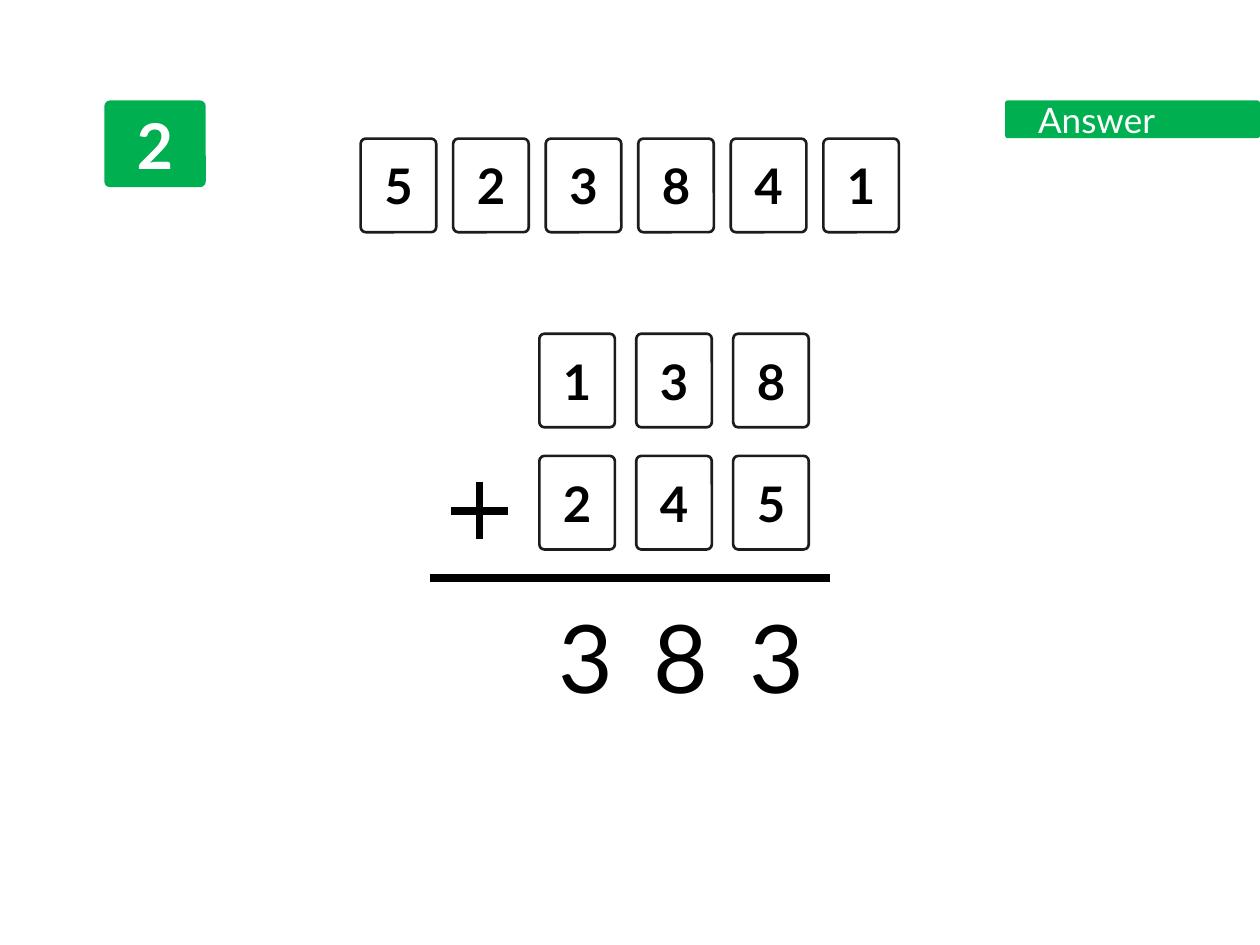
from dataclasses import dataclass

from lxml.etree import SubElement
from pptx import Presentation
from pptx.dml.color import RGBColor
from pptx.enum.shapes import MSO_CONNECTOR, MSO_SHAPE
from pptx.enum.text import MSO_ANCHOR, MSO_AUTO_SIZE, PP_ALIGN
from pptx.oxml.ns import qn
from pptx.util import Pt


@dataclass(frozen=True)
class Theme:
    font: str = "Lato"
    green: RGBColor = RGBColor(0x00, 0xB0, 0x50)
    white: RGBColor = RGBColor(0xFF, 0xFF, 0xFF)
    black: RGBColor = RGBColor(0x00, 0x00, 0x00)
    edge: RGBColor = RGBColor(0x1C, 0x1C, 0x1C)
    badge_size: float = 36
    label_size: float = 20
    card_size: float = 28
    total_size: float = 54
    edge_width: float = 1.5
    rule_width: float = 4.5
    corner: float = 0.067


THEME = Theme()
CARD_W, CARD_H = 43.2, 53.5


def write(sp, text, size, color, bold=False, **frame):
    """Put one centred run in a shape; frame holds text frame settings."""
    tf = sp.text_frame
    for name, value in {"word_wrap": True, **frame}.items():
        setattr(tf, name, value)
    p = tf.paragraphs[0]
    p.alignment = PP_ALIGN.CENTER
    r = p.add_run()
    r.text = text
    for name, value in {"name": THEME.font, "size": Pt(size), "bold": bold}.items():
        setattr(r.font, name, value)
    r.font.color.rgb = color
    return r


def add_box(shapes, box, fill, edge=None):
    sp = shapes.add_shape(MSO_SHAPE.ROUNDED_RECTANGLE, *map(Pt, box))
    sp.adjustments[0] = THEME.corner
    sp.shadow.inherit = False
    sp.fill.solid()
    sp.fill.fore_color.rgb = fill
    if edge is None:
        sp.line.fill.background()
    else:
        sp.line.color.rgb = edge
        sp.line.width = Pt(THEME.edge_width)
    return sp


def add_rule(shapes, x1, y1, x2, y2):
    line = shapes.add_connector(MSO_CONNECTOR.STRAIGHT, *map(Pt, (x1, y1, x2, y2)))
    line.line.color.rgb = THEME.black
    line.line.width = Pt(THEME.rule_width)
    SubElement(line._element.spPr, qn("a:effectLst"))


def add_badge(shapes, box, number):
    sp = add_box(shapes, box, THEME.green)
    write(sp, number, THEME.badge_size, THEME.white, bold=True,
          vertical_anchor=MSO_ANCHOR.MIDDLE)


def add_answer_tab(shapes, box, label):
    sp = add_box(shapes, box, THEME.green)
    write(sp, label, THEME.label_size, THEME.white,
          vertical_anchor=MSO_ANCHOR.MIDDLE, margin_right=Pt(48.2))


def add_cards(shapes, box, digits):
    """Spread one card per digit evenly across the box."""
    left, top, width, height = box
    pitch = (width - CARD_W) / (len(digits) - 1)
    for i, digit in enumerate(digits):
        sp = add_box(shapes, (left + i * pitch, top, CARD_W, height),
                     THEME.white, THEME.edge)
        write(sp, digit, THEME.card_size, THEME.black, bold=True,
              vertical_anchor=MSO_ANCHOR.MIDDLE)


def add_plus(shapes, box):
    left, top, width, height = box
    group = shapes.add_group_shape().shapes
    mid_x, mid_y = left + width / 2, top + height / 2
    add_rule(group, mid_x, top + height, mid_x, top)
    add_rule(group, left, mid_y, left + width, mid_y)


def add_total(shapes, box, digits):
    left, top, width, height = box
    digit_w = 39.6
    pitch = (width - digit_w) / (len(digits) - 1)
    for i, digit in enumerate(digits):
        sp = shapes.add_textbox(*map(Pt, (left + i * pitch, top, digit_w, height)))
        r = write(sp, digit, THEME.total_size, THEME.black,
                  auto_size=MSO_AUTO_SIZE.SHAPE_TO_FIT_TEXT)
        r.font._element.set("spc", "300")


def add_sum(shapes, box, addends, total):
    """Column addition: two rows of cards, a plus sign, a rule and the total."""
    left, top, width, _ = box
    for row, digits in enumerate(addends):
        add_cards(shapes, (left + 62.6, top + row * 69.8, 154, CARD_H), digits)
    add_plus(shapes, (left + 12.2, top + 85, 32.4, 32.4))
    add_rule(shapes, left, top + 139.7, left + width, top + 139.7)
    add_total(shapes, (left + 66.2, top + 148.3, 149, 72.7), total)


def main():
    prs = Presentation()
    prs.slide_width, prs.slide_height = Pt(720), Pt(540)
    shapes = prs.slides.add_slide(prs.slide_layouts[6]).shapes
    add_badge(shapes, (59.6, 57.4, 58, 49.6), "2")
    add_cards(shapes, (206.1, 79.2, 307.6, CARD_H), "523841")
    add_sum(shapes, (245.6, 190.7, 228.8, 221), ("138", "245"), "383")
    add_answer_tab(shapes, (574.4, 57.4, 145.6, 21.6), "Answer")
    prs.save("out.pptx")


if __name__ == "__main__":
    main()
